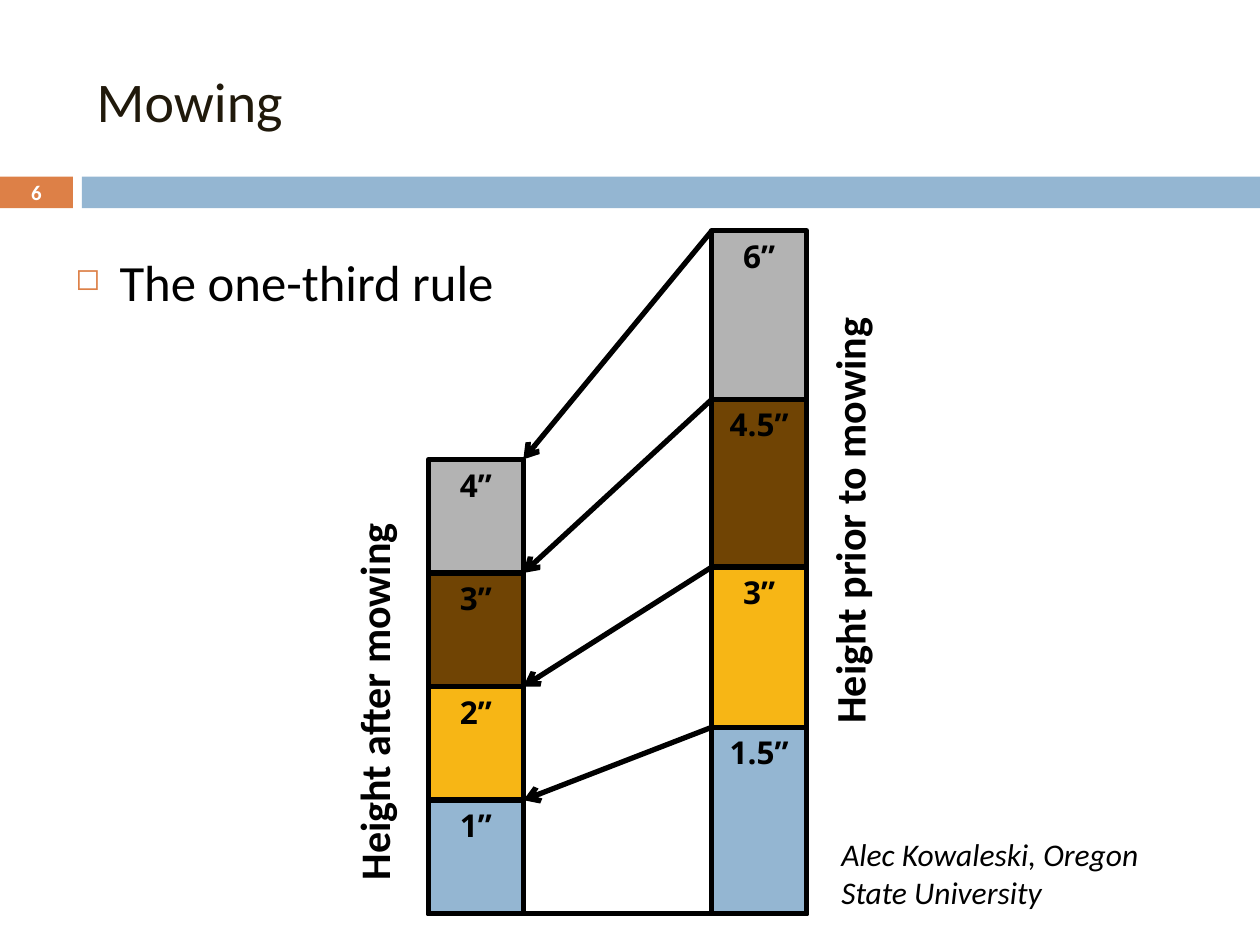
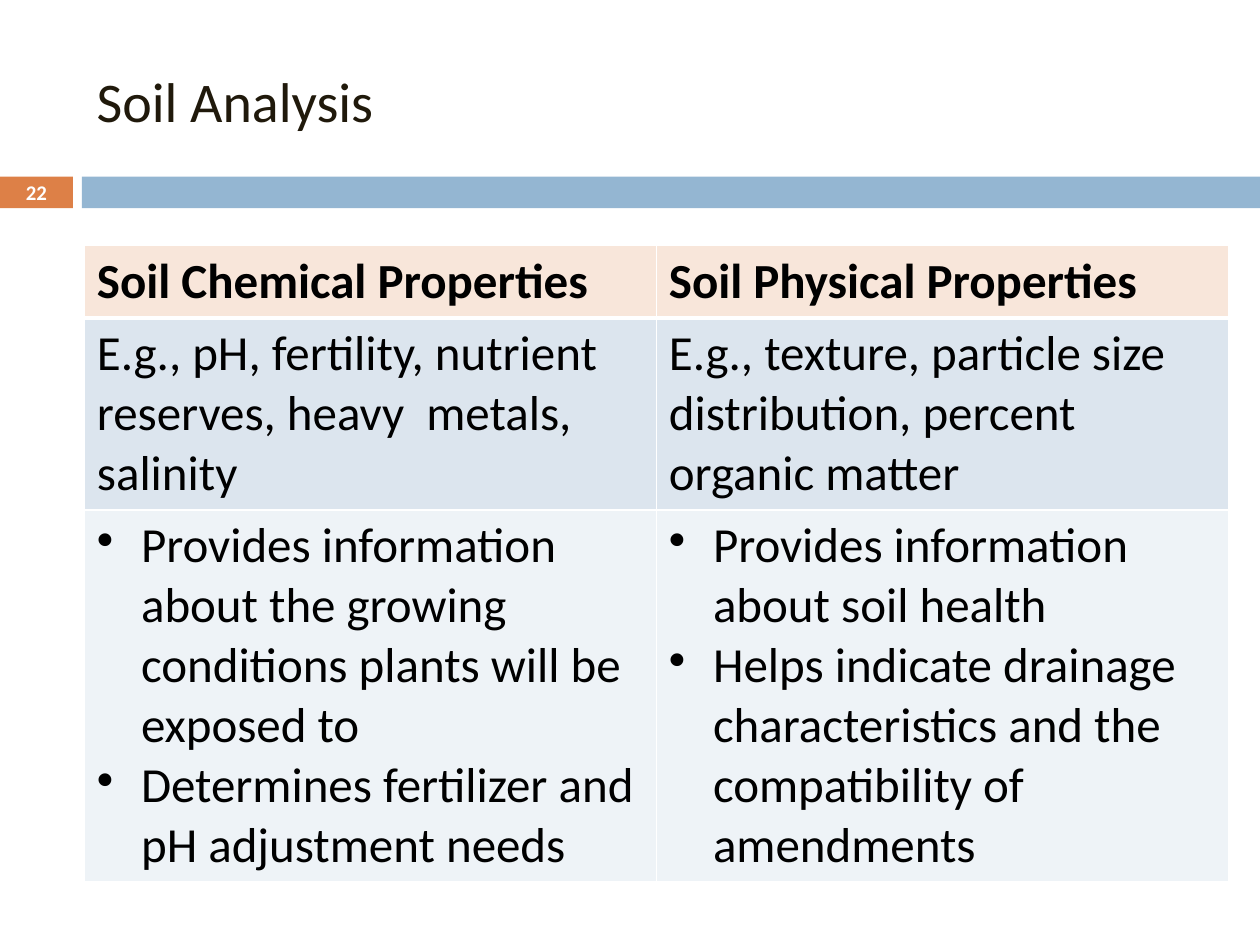
from collections import namedtuple

from lxml import etree
from pptx import Presentation
from pptx.dml.color import RGBColor
from pptx.enum.shapes import MSO_CONNECTOR, MSO_SHAPE
from pptx.enum.text import MSO_ANCHOR, PP_ALIGN
from pptx.oxml.ns import qn
from pptx.util import Cm, Pt

STRAIGHT = MSO_CONNECTOR.STRAIGHT
RECTANGLE = MSO_SHAPE.RECTANGLE
TOP, MIDDLE = MSO_ANCHOR.TOP, MSO_ANCHOR.MIDDLE
LEFT, CENTER = PP_ALIGN.LEFT, PP_ALIGN.CENTER

BLACK = RGBColor(0x00, 0x00, 0x00)
WHITE = RGBColor(0xFF, 0xFF, 0xFF)
TITLE_COLOR = RGBColor(0x20, 0x19, 0x0B)
ORANGE = RGBColor(0xDD, 0x80, 0x47)
BLUE = RGBColor(0x94, 0xB6, 0xD2)
GRAY = RGBColor(0xB3, 0xB3, 0xB3)
BROWN = RGBColor(0x70, 0x44, 0x04)
GOLD = RGBColor(0xF7, 0xB6, 0x15)
HEADER_FILL = RGBColor(0xF8, 0xE6, 0xDA)
EXAMPLE_FILL = RGBColor(0xDC, 0xE5, 0xEE)
DETAIL_FILL = RGBColor(0xEE, 0xF3, 0xF7)

BODY_FONT = "Calibri"
BAR_FONT = "Noto Sans"
HANGING_INDENT = Cm(0.89)

# All box values are centimetres.
Box = namedtuple("Box", "left top width height")
SLIDE_SIZE = (25.4, 19.05)
TITLE_BOX = Box(1.7, 0.64, 22.66, 2.74)
BAND_BOX = Box(0, 3.56, 25.4, 0.64)
NUMBER_WIDTH, BAND_GAP = 1.47, 0.18

# Colour, height before mowing, height after mowing; tallest first.
GRASS_LAYERS = [
    (GRAY, "6”", "4”"),
    (BROWN, "4.5”", "3”"),
    (GOLD, "3”", "2”"),
    (BLUE, "1.5”", "1”"),
]
PRIOR_TOPS = (0, 3.4, 6.78, 10.01)  # below the top of the diagram
AFTER_STEP = 2.29
BAR_WIDTH = 1.91

SOIL_COLUMNS = [
    ("Soil Chemical Properties",
     "E.g., pH, fertility, nutrient reserves, heavy  metals, salinity",
     ["Provides information about the growing conditions plants will be exposed to",
      "Determines fertilizer and pH adjustment needs"]),
    ("Soil Physical Properties",
     "E.g., texture, particle size distribution, percent organic matter",
     ["Provides information about soil health",
      "Helps indicate drainage characteristics and the compatibility of amendments"]),
]
ROW_HEIGHTS = (1.46, 3.87, 7.49)


def lengths(box):
    return [Cm(value) for value in box]


def add_run(paragraph, text, size, color=BLACK, font=BODY_FONT, bold=False, italic=False):
    run = paragraph.add_run()
    run.text = text
    run.font.name = font
    run.font.size = Pt(size)
    run.font.bold = bold
    run.font.italic = italic
    run.font.color.rgb = color


def add_text(slide, box, text, size, anchor=TOP, align=LEFT, rotation=0, **style):
    shape = slide.shapes.add_textbox(*lengths(box))
    shape.rotation = rotation
    frame = shape.text_frame
    frame.word_wrap = True
    frame.vertical_anchor = anchor
    paragraph = frame.paragraphs[0]
    paragraph.alignment = align
    add_run(paragraph, text, size, **style)
    return paragraph


def add_rectangle(slide, box, fill):
    shape = slide.shapes.add_shape(RECTANGLE, *lengths(box))
    shape.shadow.inherit = False
    shape.fill.solid()
    shape.fill.fore_color.rgb = fill
    shape.line.fill.background()
    return shape


def add_bullet(paragraph, character, color=None, percent=None):
    properties = paragraph._p.get_or_add_pPr()
    properties.set("marL", str(HANGING_INDENT))
    properties.set("indent", str(-HANGING_INDENT))
    if color is not None:
        bullet_color = etree.SubElement(properties, qn("a:buClr"))
        etree.SubElement(bullet_color, qn("a:srgbClr"), val=str(color))
    if percent:
        etree.SubElement(properties, qn("a:buSzPct"), val=str(percent * 1000))
    etree.SubElement(properties, qn("a:buChar"), char=character)


def add_line(slide, start, end, arrow=False):
    connector = slide.shapes.add_connector(STRAIGHT, *lengths(start + end))
    connector.line.color.rgb = BLACK
    connector.line.width = Pt(3)
    properties = connector.element.spPr
    if arrow:
        etree.SubElement(properties.find(qn("a:ln")), qn("a:tailEnd"), type="arrow")
    etree.SubElement(properties, qn("a:effectLst"))


def add_frame(presentation, title, number):
    """Add a slide with its title, band and slide number."""
    slide = presentation.slides.add_slide(presentation.slide_layouts[6])
    number_box = BAND_BOX._replace(width=NUMBER_WIDTH)
    band_left = NUMBER_WIDTH + BAND_GAP
    add_rectangle(slide, number_box, ORANGE)
    add_rectangle(slide, BAND_BOX._replace(left=band_left, width=BAND_BOX.width - band_left), BLUE)
    add_text(slide, TITLE_BOX, title, 32, MIDDLE, color=TITLE_COLOR)
    add_text(slide, number_box, str(number), 11.9, MIDDLE, CENTER, color=WHITE, bold=True)
    return slide


def add_height_bar(slide, box, fill, label):
    bar = add_rectangle(slide, box, fill)
    bar.line.color.rgb = BLACK
    bar.line.width = Pt(3)
    frame = bar.text_frame
    frame.word_wrap = False
    frame.vertical_anchor = TOP
    paragraph = frame.paragraphs[0]
    paragraph.alignment = CENTER
    add_run(paragraph, label, 18, font=BAR_FONT, bold=True)


def add_mowing_diagram(slide, box):
    """Stack nested height bars at both sides and join their tops."""
    bottom = box.top + box.height
    prior_left = box.left + box.width - BAR_WIDTH
    after_right = box.left + BAR_WIDTH
    arrows = []
    for index, (fill, prior, after) in enumerate(GRASS_LAYERS):
        prior_top = box.top + PRIOR_TOPS[index]
        after_top = bottom - AFTER_STEP * (len(GRASS_LAYERS) - index)
        for left, top, label in ((prior_left, prior_top, prior), (box.left, after_top, after)):
            add_height_bar(slide, Box(left, top, BAR_WIDTH, bottom - top), fill, label)
        arrows.append(((prior_left, prior_top), (after_right, after_top)))
    add_line(slide, (after_right, bottom), (prior_left, bottom))
    for start, end in arrows:
        add_line(slide, start, end, arrow=True)
    add_text(slide, Box(box.left - 5.06, box.top + 8.76, 7.9, 1.27),
             "Height after mowing", 24, rotation=270, bold=True)
    add_text(slide, Box(box.left + 3.7, box.top + 5.21, 9.55, 1.27),
             "Height prior to mowing", 24, align=CENTER, rotation=270, bold=True)


def set_cell_borders(cell, top, bottom):
    properties = cell._tc.get_or_add_tcPr()
    for side, width in (("L", 1), ("R", 1), ("T", top), ("B", bottom)):
        line = etree.SubElement(properties, qn(f"a:ln{side}"), w=str(Pt(width)))
        fill = etree.SubElement(line, qn("a:solidFill"))
        etree.SubElement(fill, qn("a:srgbClr"), val=str(WHITE))


def fill_cell(cell, content, fill, bold=False):
    """Write one text, or a list of texts as bullets."""
    cell.fill.solid()
    cell.fill.fore_color.rgb = fill
    bulleted = isinstance(content, list)
    frame = cell.text_frame
    for index, text in enumerate(content if bulleted else [content]):
        paragraph = frame.add_paragraph() if index else frame.paragraphs[0]
        if bulleted:
            add_bullet(paragraph, "•")
        add_run(paragraph, text, 28, bold=bold)


def add_soil_table(slide, box):
    table = slide.shapes.add_table(len(ROW_HEIGHTS), len(SOIL_COLUMNS), *lengths(box)).table
    table.horz_banding = False
    for row, height in zip(table.rows, ROW_HEIGHTS):
        row.height = Cm(height)
    fills = (HEADER_FILL, EXAMPLE_FILL, DETAIL_FILL)
    for column_index, contents in enumerate(SOIL_COLUMNS):
        table.columns[column_index].width = Cm(box.width / len(SOIL_COLUMNS))
        for row_index, (content, fill) in enumerate(zip(contents, fills)):
            cell = table.cell(row_index, column_index)
            is_header = row_index == 0
            set_cell_borders(cell, 3 if row_index == 1 else 1, 3 if is_header else 1)
            fill_cell(cell, content, fill, bold=is_header)


def add_mowing_slide(presentation):
    slide = add_frame(presentation, "Mowing", 6)
    add_mowing_diagram(slide, Box(8.64, 4.65, 7.62, 13.77))
    rule = add_text(slide, Box(1.27, 4.93, 13.54, 6.93), "The one-third rule", 29)
    rule.space_before = Pt(7)
    add_bullet(rule, "◻", ORANGE, 60)
    add_text(slide, Box(16.71, 16.71, 7.62, 1.8),
             "Alec Kowaleski, Oregon State University", 18, italic=True)


def add_soil_slide(presentation):
    slide = add_frame(presentation, "Soil Analysis", 22)
    add_soil_table(slide, Box(1.7, 4.95, 23.06, sum(ROW_HEIGHTS)))


def main():
    presentation = Presentation()
    presentation.slide_width, presentation.slide_height = lengths(SLIDE_SIZE)
    add_mowing_slide(presentation)
    add_soil_slide(presentation)
    presentation.save("out.pptx")


if __name__ == "__main__":
    main()
